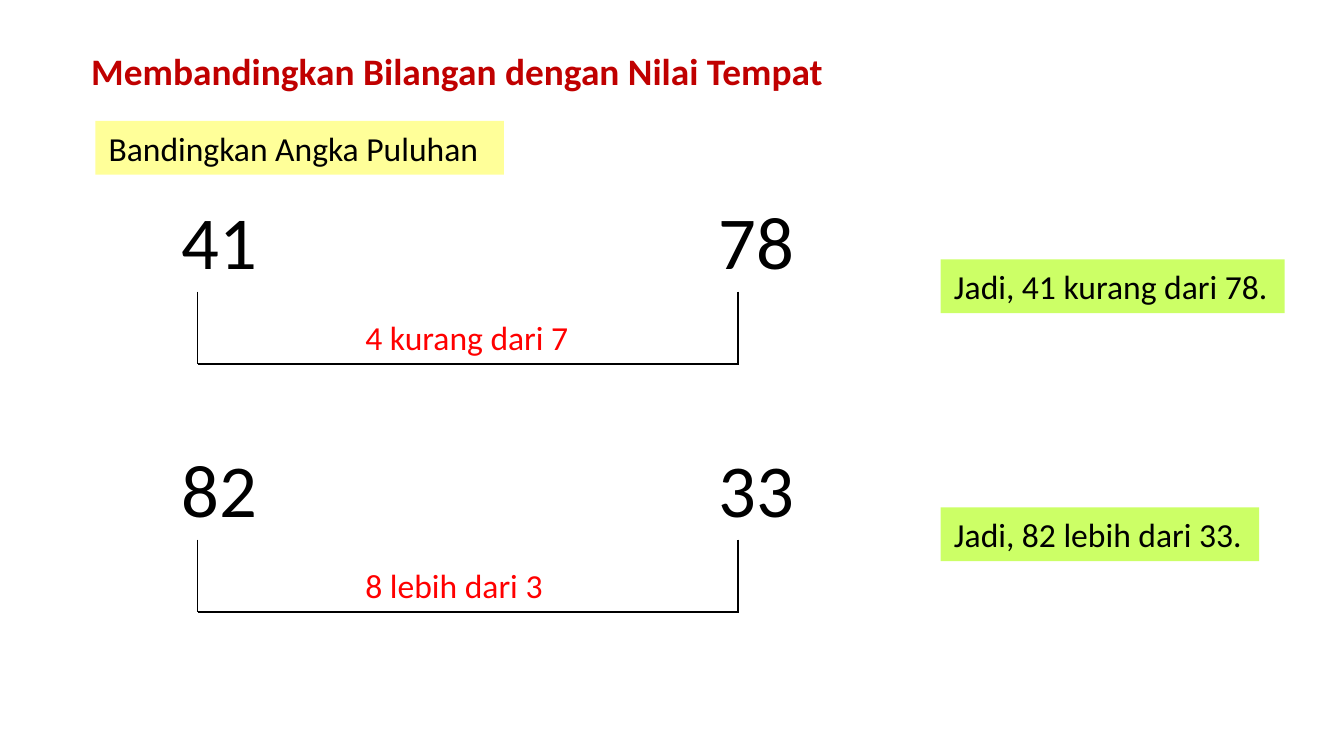
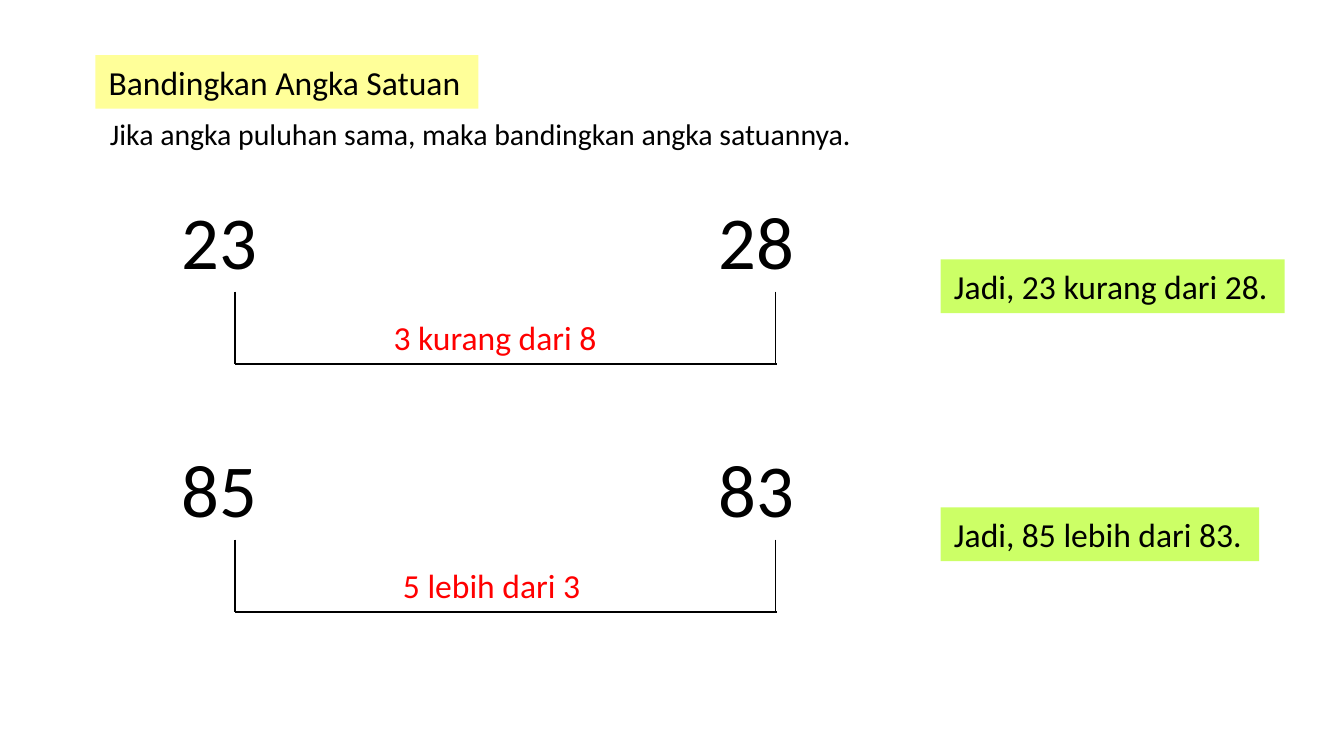
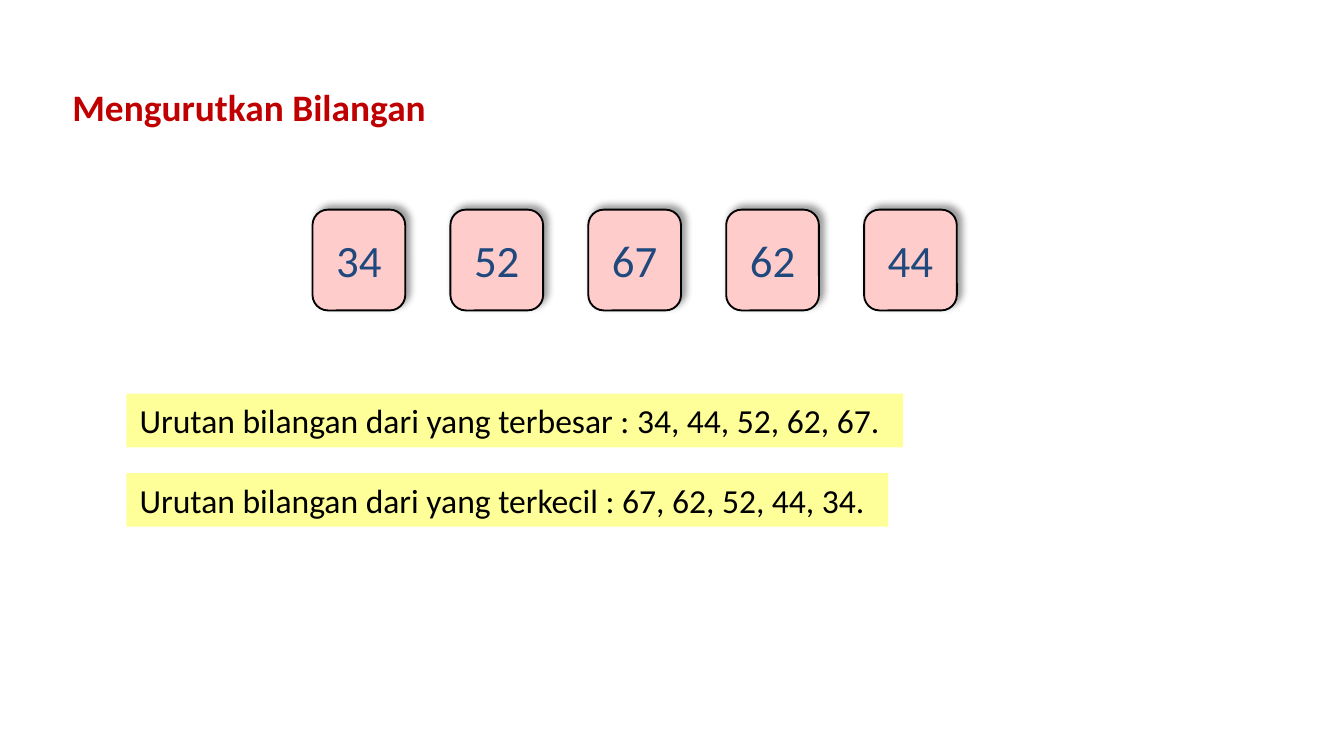
from dataclasses import dataclass

import lxml.etree as etree
import pptx
import pptx.dml.color
import pptx.enum.shapes
import pptx.enum.text
import pptx.oxml.ns
import pptx.util

SLIDE_W = pptx.util.Inches(10)
SLIDE_H = SLIDE_W * 9 // 16
GRID_COLUMNS = 100

BLACK, YELLOW, GREEN, PINK = "000000", "FFFF99", "CCFF66", "FFCCCC"
FONT = "Calibri"
TITLE = {"size": 20, "color": "C00000", "bold": True}
BODY = {"size": 18, "color": BLACK}
NOTE = {"size": 16, "color": BLACK}
NUMBER = {"size": 40, "color": BLACK, "tabs": (10, 20, 30, 40)}
REASON = {"size": 18, "color": "FF0000"}
CARD = {"size": 24, "color": "1F497D"}

LABEL_H = 4
ROW_TOPS = (14, 32.45)
BRACKET_W, BRACKET_H = 40.2, 5.4
DIGIT_LEFTS = (14.7, 17.5)
REASON_W = {"kurang": 17.3, "lebih": 15.4}
RESULT_W = {"kurang": 25.6, "lebih": 23.7}
CARD_LEFT, CARD_STEP = 23.25, 10.26


@dataclass(frozen=True)
class Box:
    """A rectangle in square grid units, a hundred to the slide's width."""
    left: float
    top: float
    width: float
    height: float = LABEL_H

    def place(self) -> tuple:
        return tuple(map(grid, (self.left, self.top, self.width, self.height)))


@dataclass(frozen=True)
class Comparison:
    first: str
    second: str
    relation: str
    reason_left: float

    def sentence(self, first: str, second: str) -> str:
        return f"{first} {self.relation} dari {second}"


def grid(units: float) -> int:
    return round(SLIDE_W * units / GRID_COLUMNS)


def rgb(color: str) -> pptx.dml.color.RGBColor:
    return pptx.dml.color.RGBColor.from_string(color)


def add_tabs(p, stops: tuple) -> None:
    qn = pptx.oxml.ns.qn
    tabs = etree.SubElement(p._p.get_or_add_pPr(), qn("a:tabLst"))
    for stop in stops:
        etree.SubElement(tabs, qn("a:tab"), {"pos": str(grid(stop)), "algn": "l"})


def write(tf, text: str, style: dict) -> None:
    p = tf.paragraphs[0]
    if "tabs" in style:
        add_tabs(p, style["tabs"])
    r = p.add_run()
    r.text = text
    r.font.color.rgb = rgb(style["color"])
    values = {"name": FONT, "size": pptx.util.Pt(style["size"]),
              "bold": style.get("bold", False)}
    for key, value in values.items():
        setattr(r.font, key, value)


def add_text(s, box: Box, text: str, style: dict, fill: str = "") -> None:
    sp = s.shapes.add_textbox(*box.place())
    if fill:
        sp.fill.solid()
        sp.fill.fore_color.rgb = rgb(fill)
    sp.text_frame.word_wrap = False
    sp.text_frame.auto_size = pptx.enum.text.MSO_AUTO_SIZE.SHAPE_TO_FIT_TEXT
    write(sp.text_frame, text, style)


def add_line(s, x1: float, y1: float, x2: float, y2: float) -> None:
    line = s.shapes.add_connector(pptx.enum.shapes.MSO_CONNECTOR.STRAIGHT,
                                  *map(grid, (x1, y1, x2, y2)))
    line.line.color.rgb = rgb(BLACK)
    line.line.width = pptx.util.Pt(1)
    etree.SubElement(line._element.spPr, pptx.oxml.ns.qn("a:effectLst"))


def add_bracket(s, left: float, top: float) -> None:
    right, bottom = left + BRACKET_W, top + BRACKET_H
    add_line(s, left, top, left, bottom)
    add_line(s, left, bottom, right + 0.1, bottom)
    add_line(s, right, top, right, bottom)


def add_comparison(s, item: Comparison, top: float, digit: int) -> None:
    """Draw two numbers, the bracket under the compared digits and the result."""
    add_text(s, Box(12.5, top, 48.1, 7.7), f"{item.first}\t\t\t\t{item.second}", NUMBER)
    add_bracket(s, DIGIT_LEFTS[digit], top + 7.7)
    add_text(s, Box(item.reason_left, top + 9.1, REASON_W[item.relation]),
             item.sentence(item.first[digit], item.second[digit]), REASON)
    add_text(s, Box(70, top + 5.3, RESULT_W[item.relation]),
             f"Jadi, {item.sentence(item.first, item.second)}.", BODY, GREEN)


def add_comparisons(s, items: tuple, digit: int) -> None:
    for item, top in zip(items, ROW_TOPS):
        add_comparison(s, item, top, digit)


def add_shadow(sp) -> None:
    qn = pptx.oxml.ns.qn
    sp.shadow.inherit = False
    effects = sp._element.spPr.find(qn("a:effectLst"))
    shadow = etree.SubElement(effects, qn("a:outerShdw"), {
        "blurRad": str(pptx.util.Pt(4)), "dist": str(pptx.util.Pt(3)),
        "dir": str(315 * 60000), "algn": "bl", "rotWithShape": "0"})
    color = etree.SubElement(shadow, qn("a:srgbClr"), {"val": BLACK})
    etree.SubElement(color, qn("a:alpha"), {"val": "40000"})


def add_card(group, box: Box, text: str) -> None:
    sp = group.shapes.add_shape(pptx.enum.shapes.MSO_SHAPE.ROUNDED_RECTANGLE, *box.place())
    sp.fill.solid()
    sp.fill.fore_color.rgb = rgb(PINK)
    sp.line.color.rgb = rgb(BLACK)
    sp.line.width = pptx.util.Pt(1)
    add_shadow(sp)
    tf = sp.text_frame
    tf.vertical_anchor = pptx.enum.text.MSO_ANCHOR.MIDDLE
    tf.paragraphs[0].alignment = pptx.enum.text.PP_ALIGN.CENTER
    write(tf, text, CARD)


def build_tens(s) -> None:
    add_text(s, Box(5.8, 3.1, 56.9, 4.4), "Membandingkan Bilangan dengan Nilai Tempat", TITLE)
    add_text(s, Box(7.1, 9, 30.4), "Bandingkan Angka Puluhan", BODY, YELLOW)
    add_comparisons(s, (Comparison("41", "78", "kurang", 26.2),
                        Comparison("82", "33", "lebih", 26.2)), digit=0)


def build_units(s) -> None:
    add_text(s, Box(7.1, 4.1, 28.5), "Bandingkan Angka Satuan", BODY, YELLOW)
    add_text(s, Box(7.2, 8.1, 57.4, 3.7),
             "Jika angka puluhan sama, maka bandingkan angka satuannya.", NOTE)
    add_comparisons(s, (Comparison("23", "28", "kurang", 28.3),
                        Comparison("85", "83", "lebih", 29)), digit=1)


def build_ordering(s) -> None:
    add_text(s, Box(4.4, 5.8, 28.6, 4.4), "Mengurutkan Bilangan", TITLE)
    group = s.shapes.add_group_shape()
    for i, number in enumerate(("34", "52", "67", "62", "44")):
        add_card(group, Box(CARD_LEFT + i * CARD_STEP, 15.6, 6.9, 7.5), number)
    add_text(s, Box(9.4, 29.3, 57.8),
             "Urutan bilangan dari yang terbesar : 34, 44, 52, 62, 67.", BODY, YELLOW)
    add_text(s, Box(9.4, 35.2, 56.7),
             "Urutan bilangan dari yang terkecil : 67, 62, 52, 44, 34.", BODY, YELLOW)


def main() -> None:
    prs = pptx.Presentation()
    prs.slide_width, prs.slide_height = SLIDE_W, SLIDE_H
    for build in (build_tens, build_units, build_ordering):
        build(prs.slides.add_slide(prs.slide_layouts[6]))
    prs.save("out.pptx")


if __name__ == "__main__":
    main()
